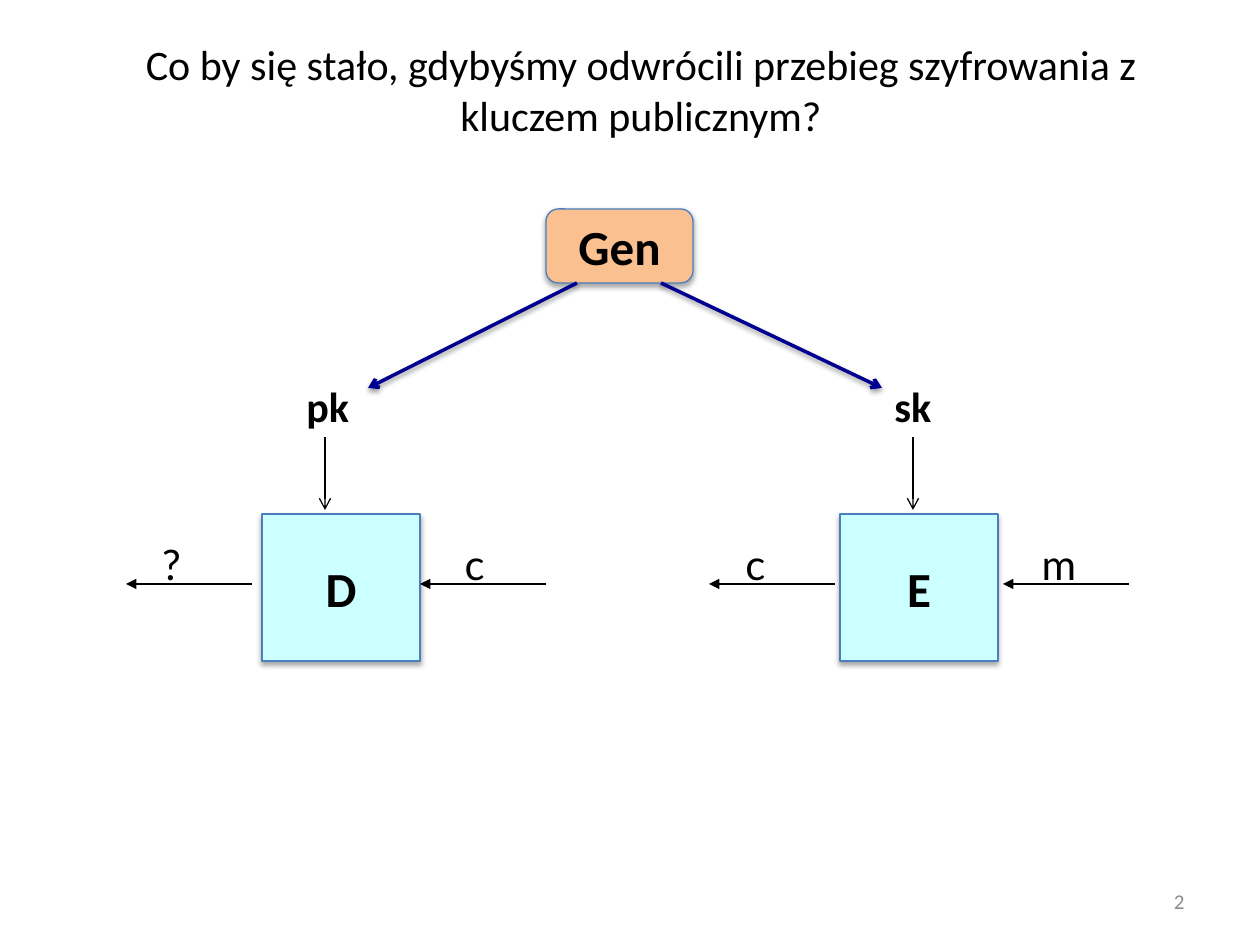
"""Build the slide on reversing public-key encryption."""
from lxml import etree
from pptx import Presentation
from pptx.dml.color import RGBColor
from pptx.enum.shapes import MSO_CONNECTOR, MSO_SHAPE
from pptx.enum.text import MSO_ANCHOR, PP_ALIGN
from pptx.oxml.ns import qn
from pptx.util import Emu, Pt

RECT, ROUND = MSO_SHAPE.RECTANGLE, MSO_SHAPE.ROUNDED_RECTANGLE
STRAIGHT = MSO_CONNECTOR.STRAIGHT
TOP, MIDDLE = MSO_ANCHOR.TOP, MSO_ANCHOR.MIDDLE
LEFT, CENTER, RIGHT = PP_ALIGN.LEFT, PP_ALIGN.CENTER, PP_ALIGN.RIGHT
PX = 914400 / 126
COLORS = {
    "text": "000000", "number": "8C8C8C", "box": "CCFFFF", "gen": "FAC090",
    "border": "4B7EBC", "key": "000090",
}
RGB = {name: RGBColor.from_string(value) for name, value in COLORS.items()}


def write(sp, text, size, align=CENTER, anchor=MIDDLE, bold=False,
          font="Calibri", color="text", wrap=True):
    tf = sp.text_frame
    tf.word_wrap = wrap
    tf.vertical_anchor = anchor
    p = tf.paragraphs[0]
    p.text = text
    p.alignment = align
    p.font.name, p.font.size, p.font.bold = font, Pt(size), bold
    p.font.color.rgb = RGB[color]


def add_shadow(sp, alpha, dist):
    effects = sp._element.spPr.find(qn("a:effectLst"))
    shadow = etree.SubElement(effects, qn("a:outerShdw"), blurRad=str(Pt(3.1)),
                              dist=str(Pt(dist)), dir="5400000", rotWithShape="0")
    color = etree.SubElement(shadow, qn("a:srgbClr"), val="000000")
    etree.SubElement(color, qn("a:alpha"), val=str(alpha * 1000))


prs = Presentation()
prs.slide_width, prs.slide_height = Emu(round(1260 * PX)), Emu(round(945 * PX))
s = prs.slides.add_slide(prs.slide_layouts[6])

texts = [
    ((74, 55, 1134, 68), dict(
        text="Co by się stało, gdybyśmy odwrócili przebieg szyfrowania z kluczem publicznym?",
        size=24)),
    ((903, 876, 294, 50), dict(text="2", size=12, align=RIGHT, color="number")),
]
for x, w, key in [(294, 68, "pk"), (882, 63, "sk")]:
    texts.append(((x, 374, w, 63), dict(
        text=key, size=24, align=LEFT, anchor=TOP, bold=True, wrap=False)))
for x, w, message in [(149, 45, "?"), (452, 45, "c"), (733, 45, "c"), (1029, 60, "m")]:
    texts.append(((x, 532, w, 63), dict(
        text=message, size=24, anchor=TOP, font="Lato", wrap=False)))
for box, style in texts:
    write(s.shapes.add_textbox(*[Emu(round(v * PX)) for v in box]), **style)

for kind, box, fill, label in [
    (RECT, (262, 514, 158, 147), "box", "D"),
    (RECT, (840, 514, 158, 147), "box", "E"),
    (ROUND, (546, 209, 147, 74), "gen", "Gen"),
]:
    sp = s.shapes.add_shape(kind, *[Emu(round(v * PX)) for v in box])
    sp.fill.solid()
    sp.fill.fore_color.rgb = RGB[fill]
    sp.line.color.rgb = RGB["border"]
    sp.line.width = Pt(0.75)
    sp.shadow.inherit = False
    add_shadow(sp, 35, 1.8)
    write(sp, label, 28, bold=True)

arrows = [((x, 584, x + 126, 584), "text", 0.75, "headEnd", "triangle")
          for x in (126, 420, 709, 1003)]
arrows += [((x, 437, x, 510), "text", 0.75, "tailEnd", "arrow") for x in (325, 913)]
arrows += [((x1, 283, x2, 388), "key", 2, "tailEnd", "arrow")
           for x1, x2 in [(577, 368), (661, 882)]]
for ends, color, width, tip, tip_type in arrows:
    line = s.shapes.add_connector(STRAIGHT, *[Emu(round(v * PX)) for v in ends])
    line.line.color.rgb = RGB[color]
    line.line.width = Pt(width)
    etree.SubElement(line.line._get_or_add_ln(), qn("a:" + tip), type=tip_type)
    etree.SubElement(line._element.spPr, qn("a:effectLst"))
    if color == "key":
        add_shadow(line, 38, 1.6)

prs.save("out.pptx")
